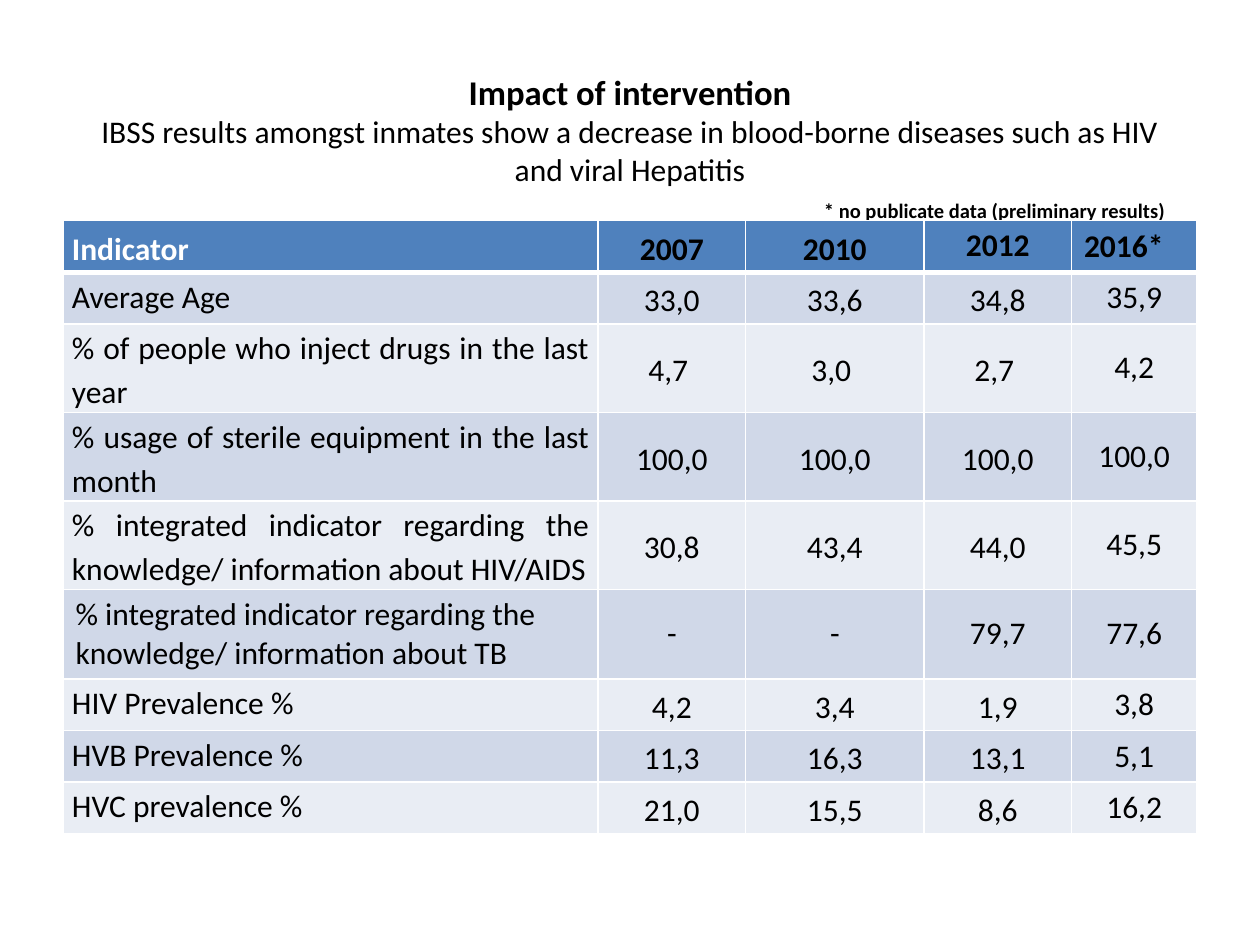
from dataclasses import dataclass

from lxml import etree
from pptx import Presentation
from pptx.dml.color import RGBColor
from pptx.enum.text import MSO_ANCHOR, MSO_AUTO_SIZE, PP_ALIGN
from pptx.oxml.ns import qn
from pptx.util import Cm, Pt

TOP, MIDDLE = MSO_ANCHOR.TOP, MSO_ANCHOR.MIDDLE
LEFT, CENTER, JUSTIFY = PP_ALIGN.LEFT, PP_ALIGN.CENTER, PP_ALIGN.JUSTIFY

BLACK = RGBColor(0x00, 0x00, 0x00)
WHITE = RGBColor(0xFF, 0xFF, 0xFF)
HEADER_BLUE = RGBColor(0x4F, 0x81, 0xBD)
BAND_DARK = RGBColor(0xD0, 0xD8, 0xE8)
BAND_LIGHT = RGBColor(0xE9, 0xED, 0xF4)
FONT = "Calibri"

COL_WIDTHS = (10.79, 2.97, 3.6, 2.97, 2.53)


@dataclass
class TitleLine:
    text: str
    size: float
    bold: bool
    indent: float = 0
    before: float = 0


@dataclass
class Row:
    values: tuple
    height: float = 1.04
    compact: bool = False  # default margins and single line spacing


@dataclass
class CellStyle:
    fill: RGBColor
    color: RGBColor
    bold: bool
    align: PP_ALIGN
    anchor: MSO_ANCHOR
    compact: bool
    top_line: float
    bottom_line: float


TITLE_LINES = (
    TitleLine("Impact of intervention", 19.8, True),
    TitleLine("IBSS results amongst inmates show a decrease in blood-borne "
              "diseases such as HIV and viral Hepatitis", 18, False),
    TitleLine("* no publicate data (preliminary results)", 11.7, True, 14.7, 6),
)

ROWS = (
    Row(("Indicator", "2007", "2010", "2012", "2016*")),
    Row(("Average Age ", "33,0", "33,6", "34,8", "35,9")),
    Row(("% of people who inject drugs in the last year",
         "4,7 ", "3,0 ", "2,7 ", "4,2"), 1.78),
    Row(("% usage of sterile equipment in the last month ",
         "100,0", "100,0", "100,0", "100,0"), 1.78),
    Row(("% integrated indicator regarding the knowledge/ information about HIV/AIDS",
         "30,8", "43,4", "44,0", "45,5"), 1.78),
    Row(("% integrated indicator regarding the knowledge/ information about TB",
         "-", "-", "79,7", "77,6"), 1.8, True),
    Row(("HIV Prevalence %", "4,2", "3,4", "1,9", "3,8")),
    Row(("HVB Prevalence %", "11,3", "16,3", "13,1", "5,1")),
    Row(("HVC prevalence %", "21,0", "15,5", "8,6", "16,2")),
)


def format_runs(p, size: float, bold: bool, color: RGBColor) -> None:
    for r in p.runs:
        r.font.name = FONT
        r.font.size = Pt(size)
        r.font.bold = bold
        r.font.color.rgb = color


def fill_title(sp) -> None:
    sp.left, sp.top, sp.width, sp.height = Cm(1.27), Cm(0.76), Cm(22.86), Cm(3.18)
    tf = sp.text_frame
    tf.text = "\n".join(line.text for line in TITLE_LINES)
    tf.word_wrap = True
    tf.auto_size = MSO_AUTO_SIZE.NONE
    tf.vertical_anchor = TOP
    tf.margin_top, tf.margin_bottom = Cm(0.66), 0
    for p, line in zip(tf.paragraphs, TITLE_LINES):
        p.alignment = CENTER
        p.space_before = Pt(line.before)
        p._p.get_or_add_pPr().set("marL", str(Cm(line.indent)))
        format_runs(p, line.size, line.bold, BLACK)


def add_borders(cell, top: float, bottom: float) -> None:
    tcPr = cell._tc.get_or_add_tcPr()
    for side, width in (("L", 1), ("R", 1), ("T", top), ("B", bottom)):
        ln = etree.SubElement(tcPr, qn(f"a:ln{side}"), w=str(Pt(width)))
        solid = etree.SubElement(ln, qn("a:solidFill"))
        etree.SubElement(solid, qn("a:srgbClr"), val=str(WHITE))


def style_for(i: int, j: int) -> CellStyle:
    header, label = i == 0, j == 0
    last = j == len(COL_WIDTHS) - 1
    compact = ROWS[i].compact or last
    if header:
        fill = HEADER_BLUE
    else:
        fill = BAND_DARK if i % 2 else BAND_LIGHT
    if label:
        align = LEFT if compact else JUSTIFY
    else:
        align = LEFT if header and last else CENTER
    at_top = j >= 3 if header else label
    return CellStyle(fill, WHITE if header and label else BLACK, header, align,
                     TOP if at_top else MIDDLE, compact,
                     3 if i == 1 else 1, 3 if header else 1)


def fill_cell(cell, text: str, style: CellStyle) -> None:
    add_borders(cell, style.top_line, style.bottom_line)
    cell.fill.solid()
    cell.fill.fore_color.rgb = style.fill
    cell.vertical_anchor = style.anchor
    cell.text_frame.text = text
    p = cell.text_frame.paragraphs[0]
    p.alignment = style.align
    if not style.compact:
        cell.margin_left = cell.margin_right = Cm(0.18)
        cell.margin_top = cell.margin_bottom = 0
        p.line_spacing = 1.15
        p.space_before = p.space_after = Pt(6)
    format_runs(p, 18, style.bold, style.color)


def add_indicator_table(s) -> None:
    height = sum(row.height for row in ROWS)
    table = s.shapes.add_table(len(ROWS), len(COL_WIDTHS), Cm(1.27), Cm(4.45),
                               Cm(sum(COL_WIDTHS)), Cm(height)).table
    table.horz_banding = False
    for column, width in zip(table.columns, COL_WIDTHS):
        column.width = Cm(width)
    for i, row in enumerate(ROWS):
        table.rows[i].height = Cm(row.height)
        for j, text in enumerate(row.values):
            fill_cell(table.cell(i, j), text, style_for(i, j))


def main() -> None:
    prs = Presentation()
    prs.slide_width, prs.slide_height = Cm(25.4), Cm(19.05)
    s = prs.slides.add_slide(prs.slide_layouts[5])
    # Title, subtitle and footnote
    fill_title(s.shapes.title)
    # Indicators by year
    add_indicator_table(s)
    prs.save("out.pptx")


if __name__ == "__main__":
    main()
